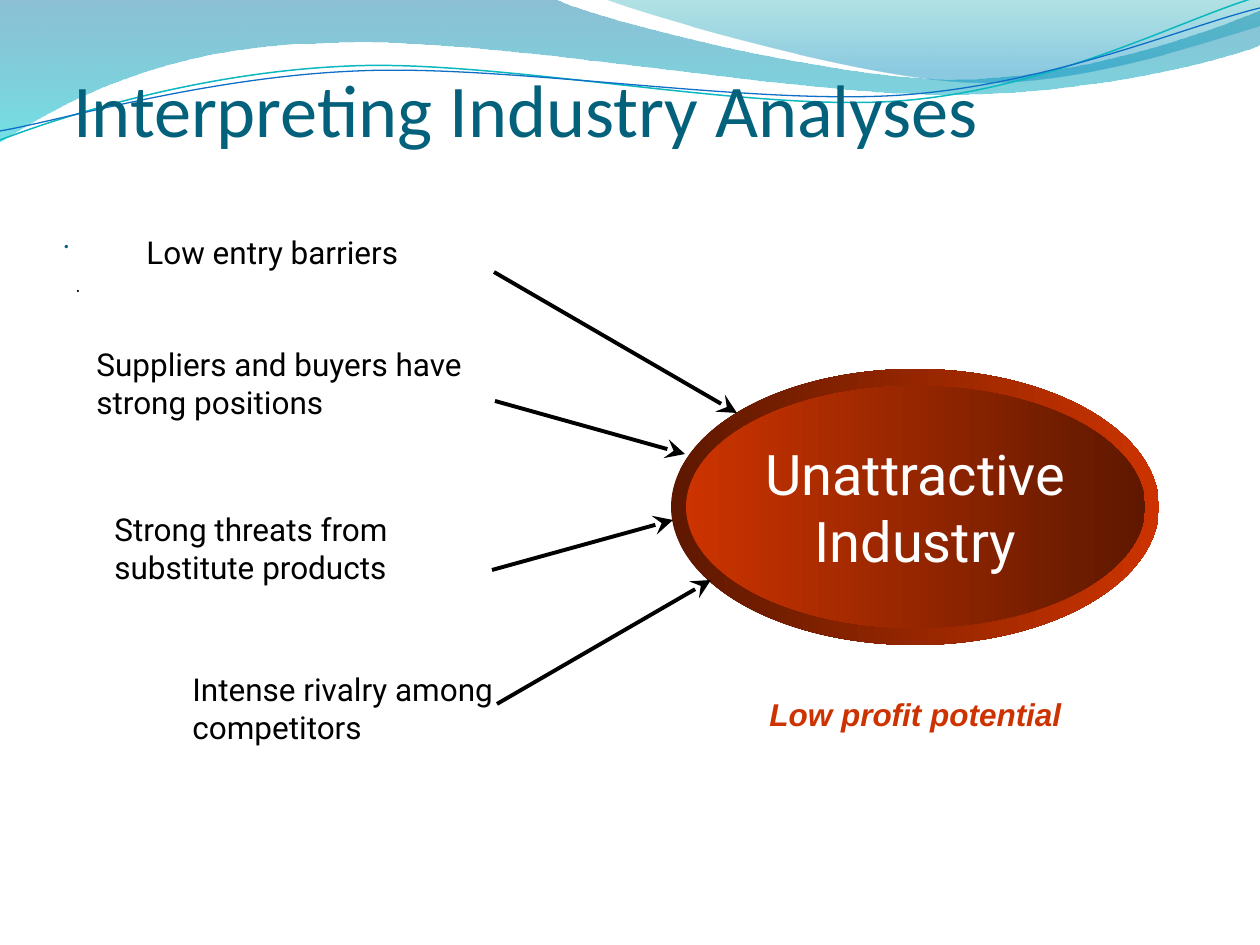
from lxml.etree import SubElement
from pptx import Presentation
from pptx.dml.color import RGBColor
from pptx.enum.shapes import MSO_CONNECTOR, MSO_SHAPE
from pptx.enum.text import MSO_ANCHOR, MSO_AUTO_SIZE, PP_ALIGN
from pptx.oxml.ns import qn
from pptx.util import Pt

PX = 914400 / 126
TEAL, RED, DARK_RED, BLACK, WHITE = "04617B", "CC3300", "5E1800", "000000", "FFFFFF"


def emu(px):
    return round(px * PX)


def color(value):
    return RGBColor.from_string(value)


def fill_gradient(shape, stops, angle):
    """Each stop is (position, colour, opacity in percent)."""
    shape.fill.gradient()
    shape.fill.gradient_angle = angle
    for stop, (position, value, opacity) in zip(shape.fill.gradient_stops, stops):
        stop.position = position
        stop.color.rgb = color(value)
        if opacity < 100:
            srgb = stop._element.find(qn("a:srgbClr"))
            SubElement(srgb, qn("a:alpha"), val=str(opacity * 1000))


def write(frame, text, size, font, value, align=PP_ALIGN.LEFT,
          anchor=MSO_ANCHOR.TOP, wrap=True):
    frame.text = text
    frame.word_wrap = wrap
    frame.auto_size = MSO_AUTO_SIZE.NONE
    frame.vertical_anchor = anchor
    paragraph = frame.paragraphs[0]
    paragraph.alignment = align
    paragraph.font.size = Pt(size)
    paragraph.font.name = font
    paragraph.font.color.rgb = color(value)
    return paragraph


def place(shape, box):
    shape.left, shape.top, shape.width, shape.height = map(emu, box)


def add_label(slide, box, text, size=18, font="Roboto", value=BLACK, **layout):
    label = slide.shapes.add_textbox(*map(emu, box))
    return label, write(label.text_frame, text, size, font, value, **layout)


def add_wave(slide, start, segments, close):
    """A segment is one point for a straight line or three for a cubic curve."""
    builder = slide.shapes.build_freeform(*start, scale=PX)
    builder.add_line_segments([point for segment in segments for point in segment],
                              close=close)
    wave = builder.convert_to_shape()
    wave.shadow.inherit = False
    sides = wave._element.iter(qn("a:lnTo"))
    sides = iter(list(sides))
    for segment in segments:
        side, *others = [next(sides) for _ in segment]
        if others:
            curve = side.makeelement(qn("a:cubicBezTo"))
            side.addprevious(curve)
            for part in (side, *others):
                curve.append(part[0])
                part.getparent().remove(part)
    return wave


def add_wave_header(slide):
    bands = [
        ((0, 0), [[(554, -1)],
                  [(600, 21), (837, 79), (955, 79)],
                  [(1075, 79), (1207, 33), (1260, 11)],
                  [(1261, 45)],
                  [(1239, 55), (1096, 96), (940, 94)],
                  [(784, 94), (481, 35), (324, 43)],
                  [(163, 45), (58, 105), (-1, 142)]],
         [(0, "0074A1", 45), (1, "00C6CF", 55)]),
        ((604, -1), [[(641, 14), (859, 78), (969, 82)],
                     [(1079, 87), (1211, 40), (1260, 26)],
                     [(1260, 0)]],
         [(0, "00A1A9", 30), (0.8, "008BBF", 45)]),
    ]
    for start, segments, stops in bands:
        band = add_wave(slide, start, segments, True)
        fill_gradient(band, stops, 270)
        band.line.fill.background()

    strands = [
        ((0, 140), [[(60, 117), (199, 72), (349, 66)],
                    [(498, 59), (747, 112), (898, 101)],
                    [(1050, 90), (1182, 19), (1257, -3)]], "0AB8BF", 0.85),
        ((0, 131), [[(59, 121), (207, 77), (357, 71)],
                    [(508, 64), (752, 106), (903, 95)],
                    [(1053, 84), (1186, 26), (1260, 8)]], "0F6FC6", 0.75),
    ]
    for start, segments, value, width in strands:
        strand = add_wave(slide, start, segments, False)
        strand.fill.background()
        strand.line.color.rgb = color(value)
        strand.line.width = Pt(width)


def add_headings(slide):
    title, body = slide.placeholders
    for placeholder in (title, body):
        slide.shapes._spTree.append(placeholder._element)  # in front of the waves

    place(body, (63, 267, 1134, 605))
    dot = write(body.text_frame, ".", 11, "TeX Gyre Pagella", BLACK)
    properties = dot._p.get_or_add_pPr()
    properties.set("marL", "0")
    properties.set("indent", "0")
    properties.insert(0, properties.makeelement(qn("a:buNone")))

    subtitle, _ = add_label(slide, (63, 97, 1134, 157), ".", 16, "Calibri", TEAL,
                            anchor=MSO_ANCHOR.BOTTOM)
    place(title, (73, 72, 1103, 80))
    heading = write(title.text_frame, "Interpreting Industry Analyses", 42.5,
                    "Calibri", TEAL, anchor=MSO_ANCHOR.BOTTOM)
    heading.line_spacing = 0.8
    for frame in (subtitle.text_frame, title.text_frame):
        frame.margin_left = frame.margin_right = frame.margin_bottom = 0


def add_industry(slide, box):
    """Bevelled ellipse: a rim and a face with opposite gradients."""
    left, top, width, height = box
    group = slide.shapes.add_group_shape()
    layers = [((left, top, width, height), DARK_RED, RED),
              ((left + 15, top + 17, width - 29, height - 34), RED, DARK_RED)]
    for layer_box, first, last in layers:
        face = group.shapes.add_shape(MSO_SHAPE.OVAL, *map(emu, layer_box))
        face.shadow.inherit = False
        face.line.fill.background()
        fill_gradient(face, [(0, first, 100), (1, last, 100)], 0)
    write(face.text_frame, "Unattractive\vIndustry", 32, "Roboto", WHITE,
          PP_ALIGN.CENTER, MSO_ANCHOR.MIDDLE, wrap=False)


def add_arrow(slide, start, end):
    arrow = slide.shapes.add_connector(MSO_CONNECTOR.STRAIGHT,
                                       *map(emu, (*start, *end)))
    arrow.line.color.rgb = color(BLACK)
    arrow.line.width = Pt(2.25)
    SubElement(arrow.line._get_or_add_ln(), qn("a:tailEnd"),
               type="stealth", w="lg", len="lg")
    SubElement(arrow._element.spPr, qn("a:effectLst"))


def add_forces(slide):
    forces = [
        ("Low entry barriers", (134, 227, 412, 63), (494, 272), (737, 413)),
        ("Suppliers and buyers have strong positions",
         (84, 339, 446, 113), (495, 401), (685, 454)),
        ("Strong threats from substitute products",
         (102, 504, 397, 113), (492, 570), (673, 520)),
        ("Intense rivalry among competitors",
         (180, 664, 397, 113), (497, 704), (711, 580)),
    ]
    for text, box, start, end in forces:
        add_label(slide, box, text)
        add_arrow(slide, start, end)


def main():
    deck = Presentation()
    deck.slide_width, deck.slide_height = emu(1260), emu(945)
    slide = deck.slides.add_slide(deck.slide_layouts[1])
    add_wave_header(slide)
    add_headings(slide)
    add_industry(slide, (671, 369, 488, 276))
    add_forces(slide)
    _, outcome = add_label(slide, (693, 689, 445, 63), "Low profit potential",
                           font="Arial", value=RED, align=PP_ALIGN.CENTER)
    outcome.font.bold = outcome.font.italic = True
    deck.save("out.pptx")


if __name__ == "__main__":
    main()
